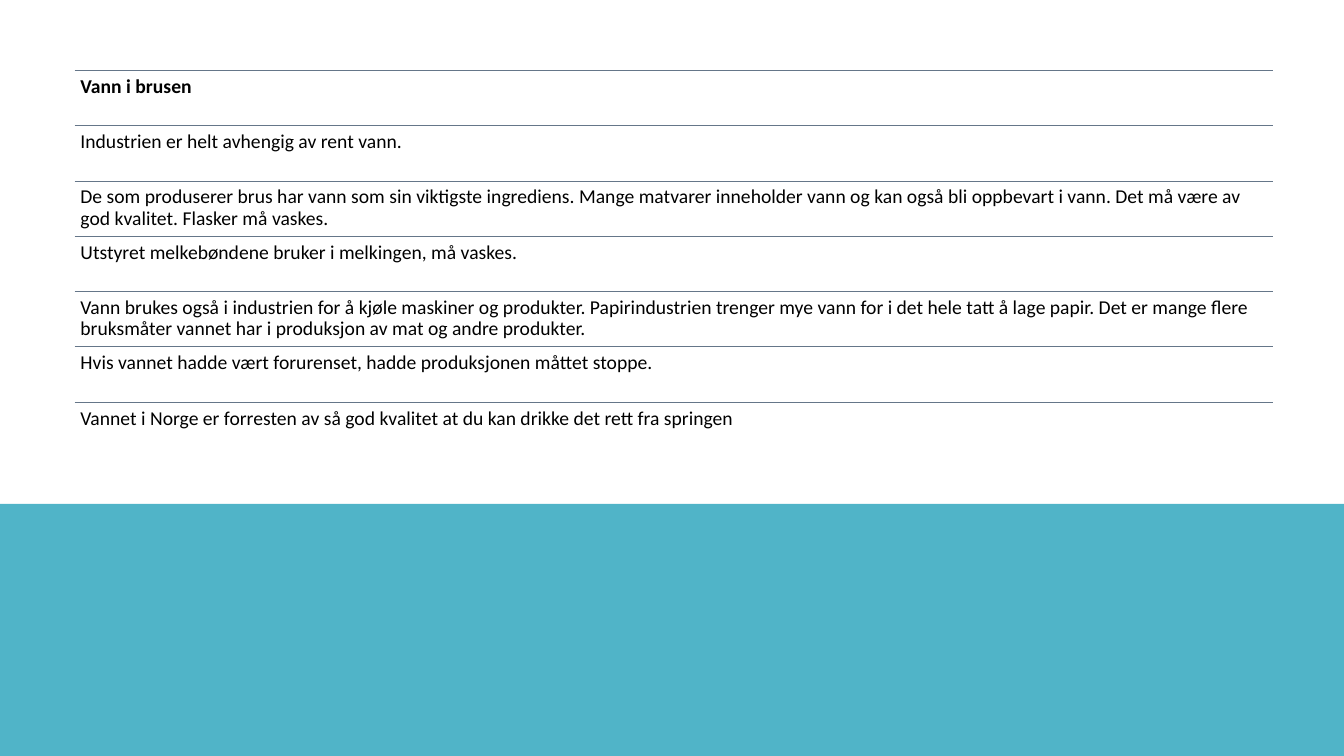
import pptx
import pptx.util
import pptx.dml.color
import pptx.enum.shapes
import pptx.enum.text
import lxml.etree
from dataclasses import dataclass

Pt = pptx.util.Pt
RGB = pptx.dml.color.RGBColor


@dataclass
class Theme:
    font: str = "Calibri"
    size: int = 14
    text: RGB = RGB(0x00, 0x00, 0x00)
    rule: RGB = RGB(0x65, 0x76, 0x89)
    band: RGB = RGB(0x50, 0xB4, 0xC8)


theme = Theme()

LEFT, TOP, WIDTH, ROW = 53.3, 50.4, 856, 39.48
INSET = 4.2

statements = [
    "Vann i brusen",
    "Industrien er helt avhengig av rent vann.",
    "De som produserer brus har vann som sin viktigste ingrediens. "
    "Mange matvarer inneholder vann og kan også bli oppbevart i vann. "
    "Det må være av god kvalitet. Flasker må vaskes.",
    "Utstyret melkebøndene bruker i melkingen, må vaskes.",
    "Vann brukes også i industrien for å kjøle maskiner og produkter. "
    "Papirindustrien trenger mye vann for i det hele tatt å lage papir. "
    "Det er mange flere bruksmåter vannet har i produksjon av mat og andre produkter.",
    "Hvis vannet hadde vært forurenset, hadde produksjonen måttet stoppe.",
    "Vannet i Norge er forresten av så god kvalitet at du kan drikke det rett fra springen",
]

prs = pptx.Presentation()
prs.slide_width = Pt(960)
prs.slide_height = Pt(540)
s = prs.slides.add_slide(prs.slide_layouts[6])

band = s.shapes.add_shape(
    pptx.enum.shapes.MSO_SHAPE.RECTANGLE, Pt(0), Pt(360), Pt(960), Pt(180)
)
band.shadow.inherit = False
band.fill.solid()
band.fill.fore_color.rgb = theme.band
band.line.fill.background()

for i, statement in enumerate(statements):
    y = TOP + i * ROW

    rule = s.shapes.add_connector(
        pptx.enum.shapes.MSO_CONNECTOR.STRAIGHT, Pt(LEFT), Pt(y), Pt(LEFT + WIDTH), Pt(y)
    )
    rule.line.color.rgb = theme.rule
    rule.line.width = Pt(0.75)
    lxml.etree.SubElement(rule._element.spPr, pptx.oxml.ns.qn("a:effectLst"))

    sp = s.shapes.add_textbox(Pt(LEFT), Pt(y), Pt(WIDTH), Pt(ROW))
    tf = sp.text_frame
    tf.word_wrap = True
    tf.vertical_anchor = pptx.enum.text.MSO_ANCHOR.TOP
    tf.margin_left = tf.margin_right = tf.margin_top = tf.margin_bottom = Pt(INSET)
    tf.text = statement
    p = tf.paragraphs[0]
    p.line_spacing = 0.9
    r = p.runs[0]
    r.font.name = theme.font
    r.font.size = Pt(theme.size)
    r.font.color.rgb = theme.text
    r.font.bold = i == 0

prs.save("out.pptx")
